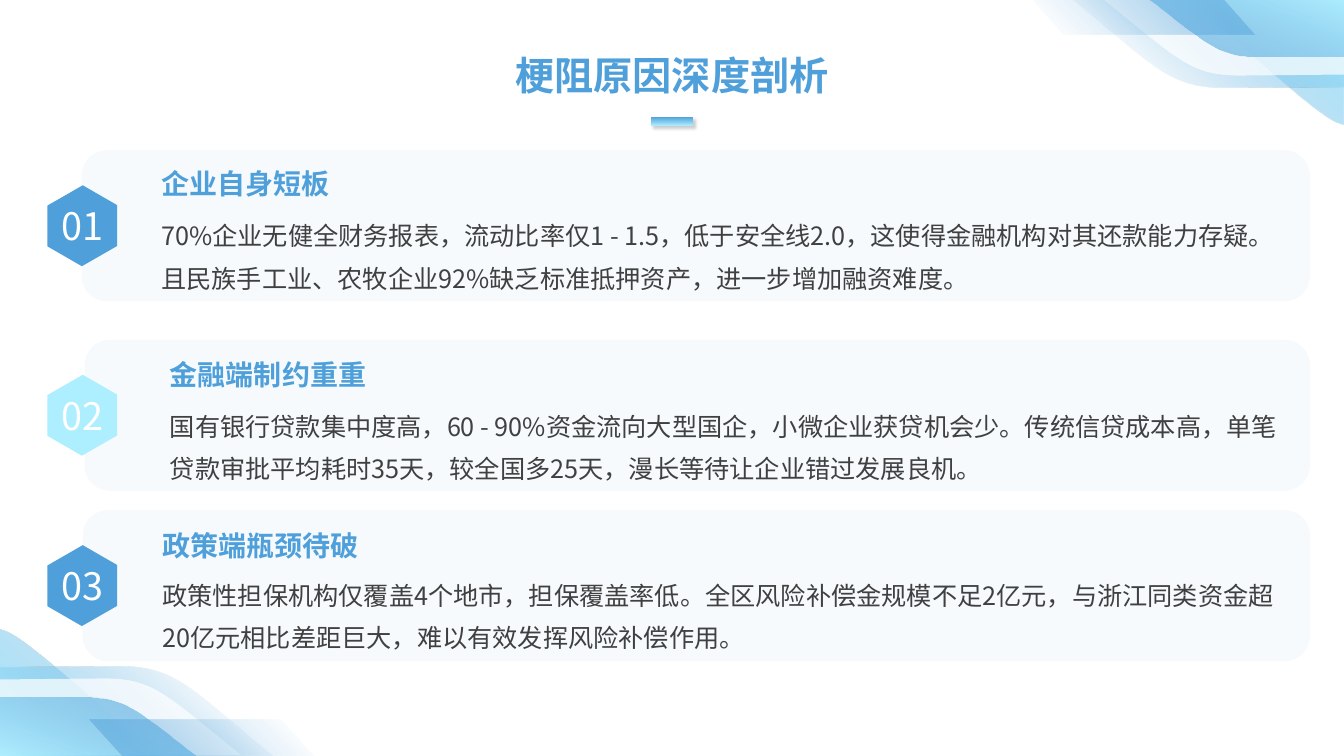
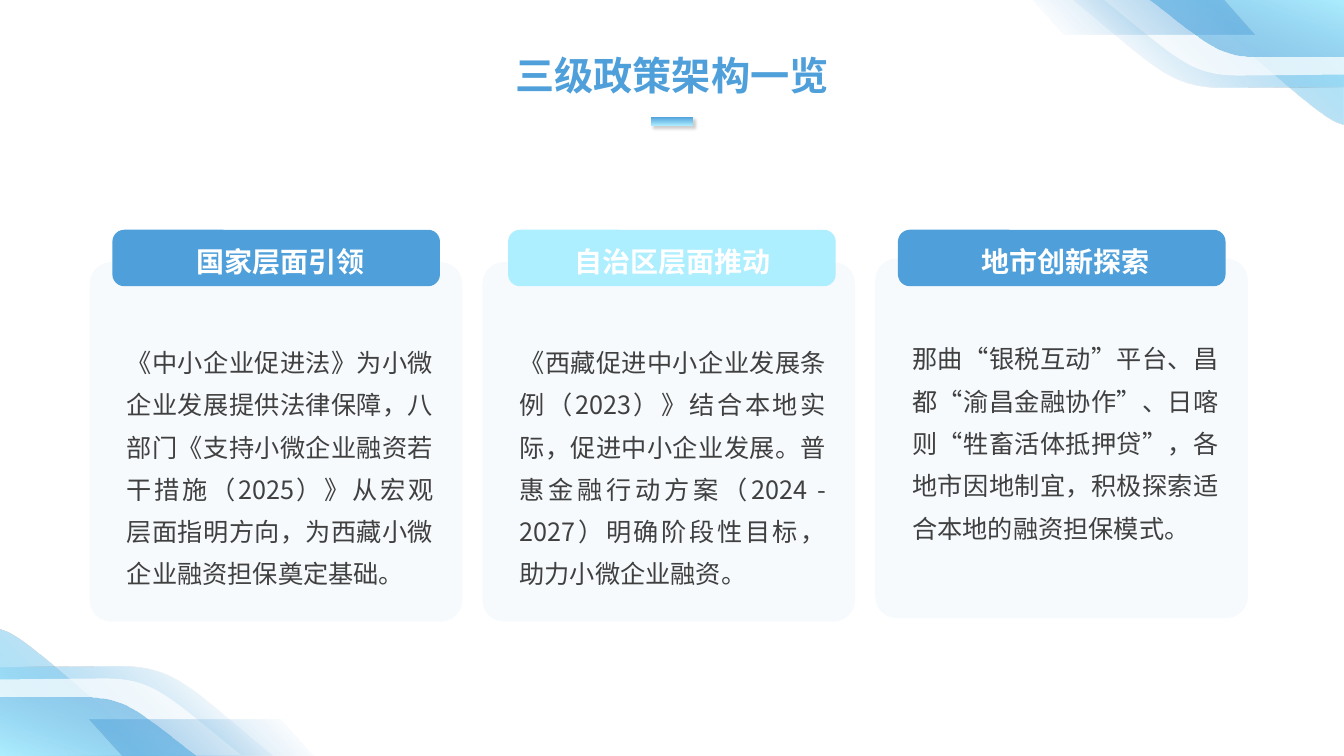
"""Two slides on financing obstacles and policy levels, laid out on a 160 by 90 grid."""
import pptx
import pptx.util
import pptx.dml.color
import pptx.enum.shapes
import pptx.enum.text
import pptx.oxml.ns
import lxml.etree

COLOURS = {"blue": "4FA0DA", "cyan": "ADEEFF", "white": "FFFFFF", "ink": "404040", "shade": "000000"}
FONT = "Noto Sans CJK SC"
COLUMNS, ROWS = 160, 90
PRESET = pptx.enum.shapes.MSO_SHAPE
ALIGN = pptx.enum.text.PP_ALIGN
ANCHOR = pptx.enum.text.MSO_ANCHOR
qn = pptx.oxml.ns.qn

deck = pptx.Presentation()
deck.slide_width = pptx.util.Inches(40 / 3)
deck.slide_height = pptx.util.Inches(7.5)
CELL = deck.slide_width // COLUMNS


def draw(slide, outline, box=None, stops=(), angle=0):
    """Add a preset, a point outline or a text box, filled with (position, colour, opacity) stops."""
    if box:
        frame = [round(length * CELL) for length in box]
    if outline == "text":
        return slide.shapes.add_textbox(*frame)
    if isinstance(outline, list):
        points = [(x * CELL, y * CELL) for x, y in outline]
        builder = slide.shapes.build_freeform(*points[0], scale=1.0)
        builder.add_line_segments(points[1:], close=True)
        shape = builder.convert_to_shape()
    else:
        shape = slide.shapes.add_shape(outline, *frame)
    shape.shadow.inherit = False
    shape.line.fill.background()
    if len(stops) == 1:
        shape.fill.solid()
        shape.fill.fore_color.rgb = pptx.dml.color.RGBColor.from_string(COLOURS[stops[0][1]])
    else:
        shape.fill.gradient()
        shape.fill.gradient_angle = 360 - angle
        for mark, (position, colour, opacity) in zip(shape.fill.gradient_stops, stops):
            mark.position = position / 100
            mark.color.rgb = pptx.dml.color.RGBColor.from_string(COLOURS[colour])
    for tint, (position, colour, opacity) in zip(list(shape.element.iter(qn("a:srgbClr"))), stops):
        if opacity < 100:
            lxml.etree.SubElement(tint, qn("a:alpha")).set("val", str(opacity * 1000))
    return shape


def write(holder, text, size, colour, bold=False, align=ALIGN.LEFT, spacing=None,
          anchor=ANCHOR.TOP, insets=(0, 0, 0, 0)):
    """Set one paragraph of text in a shape or text box."""
    frame = holder.text_frame
    frame.word_wrap = True
    frame.vertical_anchor = anchor
    frame.margin_left, frame.margin_top, frame.margin_right, frame.margin_bottom = [
        round(inset * CELL) for inset in insets]
    frame.text = text
    paragraph = frame.paragraphs[0]
    paragraph.alignment = align
    paragraph.line_spacing = spacing
    font = paragraph.runs[0].font
    font.name, font.size, font.bold = FONT, pptx.util.Pt(size), bold
    font.color.rgb = pptx.dml.color.RGBColor.from_string(COLOURS[colour])
    latin = next(holder.element.iter(qn("a:latin")))
    latin.addnext(lxml.etree.Element(qn("a:ea"), typeface=FONT))


blank = deck.slide_layouts[6]
for placeholder in list(blank.placeholders):
    placeholder.element.getparent().remove(placeholder.element)
causes, policies = [deck.slides.add_slide(blank) for _ in range(2)]

waves = [
    ([(141, -0.24), (151.68, 8.64), (156, 12.84), (159, 14.4)], 14.76,
     [(0, "blue", 0), (95, "cyan", 100)], 315),
    ([(127.56, -0.12), (137.64, 8.16), (139.2, 10.44), (145.92, 10.44)], 10.32,
     [(19, "blue", 0), (100, "cyan", 100)], 315),
    ([(131.28, -0.12), (140.16, 6.96), (141.6, 9), (147.6, 9)], 8.88, [(0, "white", 70)], 0),
    ([(136.56, -0.12), (143.88, 5.28), (144.96, 6.72), (149.88, 6.72)], 6.72,
     [(0, "blue", 57), (100, "cyan", 100)], 290),
]
for turn in (0, 180):
    corner = []
    for curve, edge, stops, angle in waves:
        wave = draw(causes, curve + [(COLUMNS, edge), (COLUMNS, curve[0][1])], None, stops, angle)
        pull, push, end = list(wave.element.iter(qn("a:lnTo")))[:3]
        bend = lxml.etree.Element(qn("a:cubicBezTo"))
        pull.addprevious(bend)
        for segment in (pull, push, end):
            bend.append(segment[0])
            segment.getparent().remove(segment)
        corner.append(wave)
    ribbon = draw(causes, PRESET.PARALLELOGRAM, (122.64, -0.24, 26.76, 4.32),
                  [(8, "blue", 0), (79, "blue", 45)], 45)
    ribbon.adjustments[0] = 0.92
    ribbon.element.spPr.find(qn("a:xfrm")).set("flipV", "1")
    for part in corner + [ribbon]:
        if turn:
            part.left = deck.slide_width - part.left - part.width
            part.top = round((ROWS - 0.24) * CELL) - part.top - part.height
            part.rotation = turn

title_bar = draw(causes, PRESET.RECTANGLE, (77.48, 13.92, 5.04, 1.08),
                 [(0, "blue", 100), (100, "cyan", 100)], 90)
effects = title_bar.element.spPr.find(qn("a:effectLst"))
shadow = lxml.etree.SubElement(effects, qn("a:outerShdw"), blurRad="25400", dist="38100",
                               dir="2700000", algn="tl", rotWithShape="0")
shade = lxml.etree.SubElement(shadow, qn("a:srgbClr"), val=COLOURS["shade"])
lxml.etree.SubElement(shade, qn("a:alpha"), val="20000")

for part in list(causes.shapes):
    blank.shapes.element.append(part.element)

for slide, title in ((causes, "梗阻原因深度剖析"), (policies, "三级政策架构一览")):
    write(draw(slide, "text", (11.36, 5.52, 137.28, 6.84)), title, 28, "blue", True, ALIGN.CENTER,
          insets=(1.2, 0.6, 1.2, 0.6))

cause_rows = [
    (17.88, 9.72, 19.2, 19.8, 24.84, "blue", "企业自身短板",
     "70%企业无健全财务报表，流动比率仅1 - 1.5，低于安全线2.0，这使得金融机构对其还款能力存疑。"
     "且民族手工业、农牧企业92%缺乏标准抵押资产，进一步增加融资难度。"),
    (40.44, 10.08, 20.22, 42.54, 47.52, "cyan", "金融端制约重重",
     "国有银行贷款集中度高，60 - 90%资金流向大型国企，小微企业获贷机会少。传统信贷成本高，"
     "单笔贷款审批平均耗时35天，较全国多25天，漫长等待让企业错过发展良机。"),
    (60.72, 9.84, 19.32, 62.82, 67.62, "blue", "政策端瓶颈待破",
     "政策性担保机构仅覆盖4个地市，担保覆盖率低。全区风险补偿金规模不足2亿元，"
     "与浙江同类资金超20亿元相比差距巨大，难以有效发挥风险补偿作用。"),
]
for number, (top, left, indent, heading_top, reason_top, colour, heading, reason) in enumerate(cause_rows, 1):
    band = draw(causes, PRESET.ROUNDED_RECTANGLE, (left, top, 155.95 - left, 18), [(0, "blue", 5)])
    band.adjustments[0] = 0.17
    badge = draw(causes, PRESET.HEXAGON, (5, top + 4.8, 9.6, 8.4), [(0, colour, 100)])
    badge.adjustments[0] = 0.29
    badge.rotation = 30
    write(draw(causes, "text", (3.48, top + 5.04, 12.6, 7.92)), f"{number:02}", 27, "white",
          align=ALIGN.CENTER, anchor=ANCHOR.MIDDLE, insets=(1.2, 0.6, 1.2, 0.6))
    write(draw(causes, "text", (indent, heading_top, 89.76, 4.08)), heading, 20, "blue", True,
          anchor=ANCHOR.MIDDLE)
    write(draw(causes, "text", (indent, reason_top, 152.88 - indent, 10.32)), reason, 18, "ink",
          spacing=1.4)

policy_columns = [
    (31.2, 2.7, 1.68, "blue", "国家层面引领",
     "《中小企业促进法》为小微企业发展提供法律保障，八部门《支持小微企业融资若干措施（2025）》"
     "从宏观层面指明方向，为西藏小微企业融资担保奠定基础。"),
    (31.2, 3.05, 0.84, "cyan", "自治区层面推动",
     "《西藏促进中小企业发展条例（2023）》结合本地实际，促进中小企业发展。"
     "普惠金融行动方案（2024 - 2027）明确阶段性目标，助力小微企业融资。"),
    (30.78, 2.7, 1.68, "blue", "地市创新探索",
     "那曲“银税互动”平台、昌都“渝昌金融协作”、日喀则“牲畜活体抵押贷”，"
     "各地市因地制宜，积极探索适合本地的融资担保模式。"),
]
for column, (top, offset, indent, colour, level, measures) in enumerate(policy_columns):
    left = 10.68 + 46.76 * column
    card = draw(policies, PRESET.ROUNDED_RECTANGLE, (left, top, 44.36, 42.8), [(0, "blue", 5)])
    card.adjustments[0] = 0.06
    tab = draw(policies, PRESET.ROUNDED_RECTANGLE, (left + offset, 27.36, 39, 6.72), [(0, colour, 100)])
    tab.adjustments[0] = 0.21
    write(tab, level, 20, "white", True, ALIGN.CENTER, 1.2, ANCHOR.MIDDLE, (indent, 0, 0.72, 0))
    write(draw(policies, "text", (left + 2.74, top + 7.02, 38.88, 24.12)), measures, 18, "ink",
          align=ALIGN.JUSTIFY, spacing=1.4, insets=(1.68, 1.68, 0.72, 1.68))

deck.save("out.pptx")
